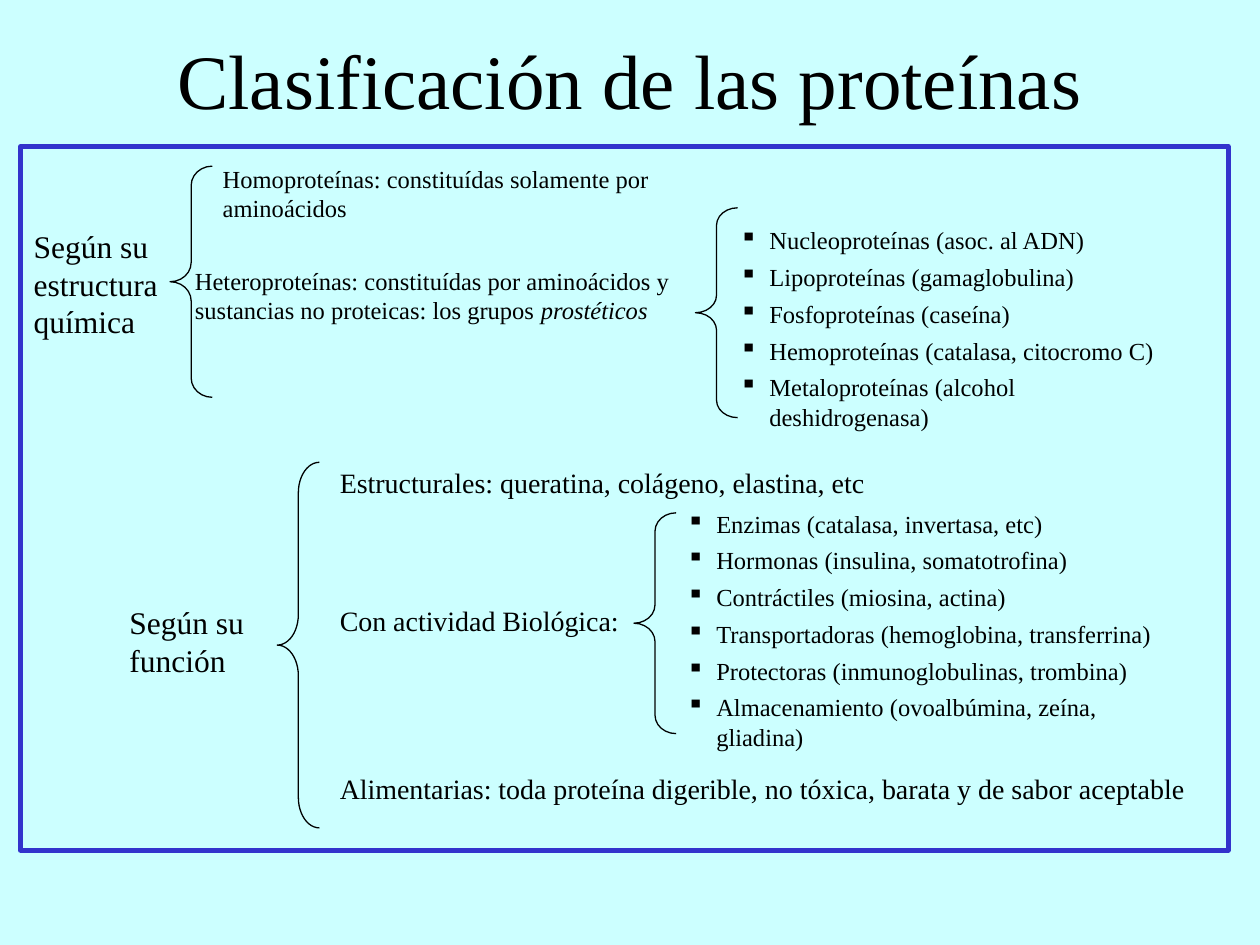
import pptx
import pptx.util
import pptx.dml.color
import pptx.enum.shapes
import pptx.enum.text
import pptx.oxml

Cm, Pt = pptx.util.Cm, pptx.util.Pt
Kind = pptx.enum.shapes.MSO_SHAPE
Align = pptx.enum.text.PP_ALIGN
Anchor = pptx.enum.text.MSO_ANCHOR
NS = 'xmlns:a="http://schemas.openxmlformats.org/drawingml/2006/main"'


def paint(fill, tint):
    fill.solid()
    fill.fore_color.rgb = pptx.dml.color.RGBColor.from_string(tint)


def write(par, text, size, italic=False):
    run = par.add_run()
    run.text = text
    look = {"name": "Times New Roman", "size": Pt(size), "italic": italic}
    for key, val in look.items():
        setattr(run.font, key, val)
    paint(run.font.fill, "000000")


deck = pptx.Presentation()
deck.slide_width, deck.slide_height = Cm(25.4), Cm(19.05)
slide = deck.slides.add_slide(deck.slide_layouts[5])
paint(slide.background.fill, "CCFFFF")

# Title
title = slide.shapes.title
spot = {"left": Cm(1.9), "top": Cm(0), "width": Cm(21.6), "height": Cm(3.18)}
for key, val in spot.items():
    setattr(title, key, val)
title.text_frame.vertical_anchor = Anchor.MIDDLE
par = title.text_frame.paragraphs[0]
par.alignment = Align.CENTER
write(par, "Clasificación de las proteínas", 44)

# Braces, then the frame: kind, left, top, width, height, colour, weight
shapes = [
    (Kind.LEFT_BRACE, 3.43, 3.35, 0.85, 4.66, "000000", 0.75),
    (Kind.LEFT_BRACE, 14.02, 4.19, 0.85, 4.23, "000000", 0.75),
    (Kind.LEFT_BRACE, 5.59, 9.32, 0.85, 7.37, "000000", 0.75),
    (Kind.LEFT_BRACE, 12.78, 10.34, 0.85, 4.45, "000000", 0.75),
    (Kind.RECTANGLE, 0.42, 2.96, 24.34, 14.18, "3333CC", 3),
]
for kind, left, top, wide, high, tint, weight in shapes:
    shape = slide.shapes.add_shape(kind, Cm(left), Cm(top), Cm(wide), Cm(high))
    shape.shadow.inherit = False
    shape.fill.background()
    paint(shape.line.fill, tint)
    shape.line.width = Pt(weight)
    if kind == Kind.LEFT_BRACE:
        shape.adjustments[0] = high / wide / 12  # curl is a twelfth of the height

# Text blocks: left, top, width, height, size, lines (several lines make a list)
blocks = [
    (0.43, 4.45, 3.23, 2.54, 18, ["Según su estructura química"]),
    (4.24, 3.18, 11.5, 1.45, 14,
     ["Homoproteínas: constituídas solamente por aminoácidos"]),
    (3.68, 5.23, 10.36, 1.45, 14,
     ["Heteroproteínas: constituídas por aminoácidos y sustancias "
      "no proteicas: los grupos *prostéticos"]),
    (14.66, 4.42, 9.04, 3.81, 14,
     ["Nucleoproteínas (asoc. al ADN)",
      "Lipoproteínas (gamaglobulina)",
      "Fosfoproteínas (caseína)",
      "Hemoproteínas (catalasa, citocromo C)",
      "Metaloproteínas (alcohol deshidrogenasa)"]),
    (2.36, 12.04, 3.23, 1.78, 18, ["Según su función"]),
    (6.6, 9.27, 11.4, 0.94, 16,
     ["Estructurales: queratina, colágeno, elastina, etc"]),
    (6.6, 12.04, 6.4, 0.94, 16, ["Con actividad Biológica:"]),
    (6.6, 15.42, 17.8, 0.94, 16,
     ["Alimentarias: toda proteína digerible, no tóxica, "
      "barata y de sabor aceptable"]),
    (13.59, 10.13, 10.29, 4.55, 14,
     ["Enzimas (catalasa, invertasa, etc)",
      "Hormonas (insulina, somatotrofina)",
      "Contráctiles (miosina, actina)",
      "Transportadoras (hemoglobina, transferrina)",
      "Protectoras (inmunoglobulinas, trombina)",
      "Almacenamiento (ovoalbúmina, zeína, gliadina)"]),
]
for left, top, wide, high, size, lines in blocks:
    box = slide.shapes.add_textbox(Cm(left), Cm(top), Cm(wide), Cm(high))
    frame = box.text_frame
    frame.word_wrap = True
    for num, line in enumerate(lines):
        par = frame.add_paragraph() if num else frame.paragraphs[0]
        # Text after the star is italic
        plain, star, slant = line.partition("*")
        write(par, plain, size)
        if star:
            write(par, slant, size, italic=True)
        if len(lines) > 1:
            par.space_before = Pt(4.2)
            prop = par._p.get_or_add_pPr()
            for key, val in {"marL": Cm(0.6), "indent": -Cm(0.6)}.items():
                prop.set(key, str(int(val)))
            prop.append(pptx.oxml.parse_xml(f'<a:buChar {NS} char="▪"/>'))

deck.save("out.pptx")
